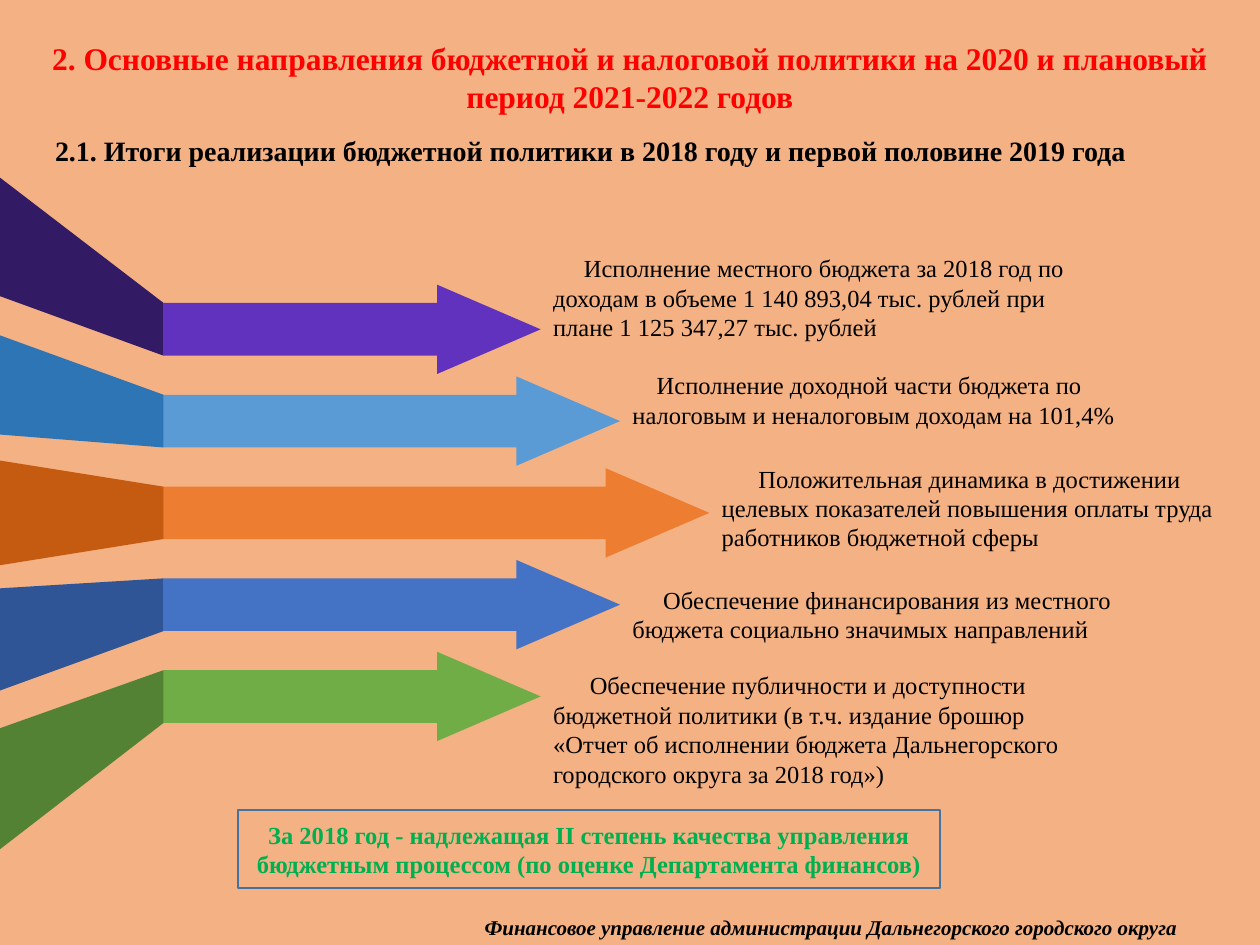
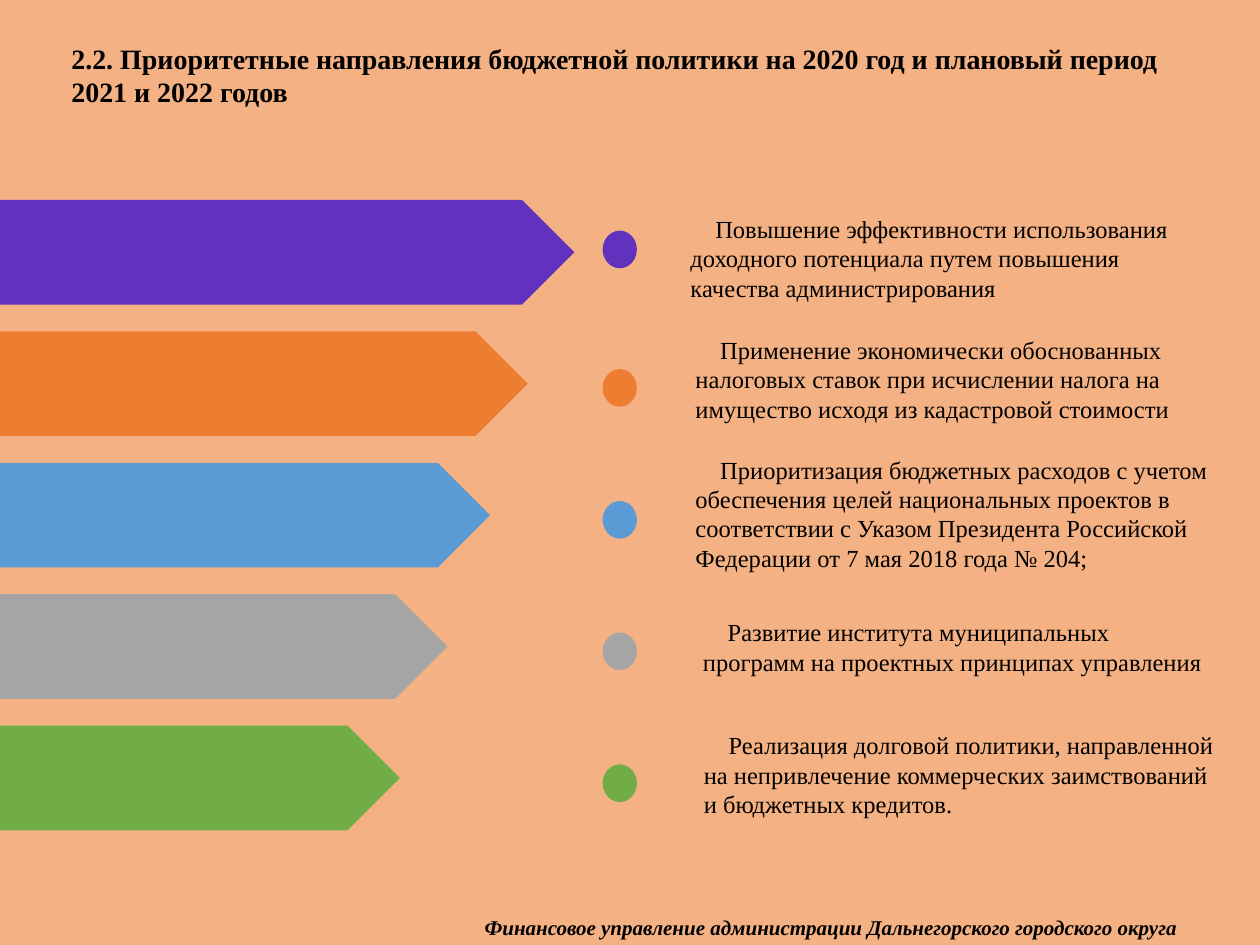
import pptx
import pptx.util
import pptx.dml.color
import pptx.enum.shapes
import pptx.enum.text

Cm = pptx.util.Cm
Kind = pptx.enum.shapes.MSO_SHAPE
Align = pptx.enum.text.PP_ALIGN

# Shared colours
SAND, BLACK, RED, LEAF = "F4B183", "000000", "FF0000", "00B050"
PLUM, SKY, ORANGE, BLUE, GREEN, GREY = (
    "6132BE", "5B9BD5", "ED7D31", "4472C4", "70AD47", "A5A5A5")
FOOTER = "Финансовое управление администрации Дальнегорского городского округа"


def tint(code):
    return pptx.dml.color.RGBColor.from_string(code)


class Deck:
    """Holds the style and the current slide; lengths are in centimetres."""
    font = "Times New Roman"

    def __init__(self):
        self.file = pptx.Presentation()
        self.file.slide_width, self.file.slide_height = Cm(25.4), Cm(19.05)
        back = self.file.slide_master.background.fill
        back.solid()
        back.fore_color.rgb = tint(SAND)

    def page(self):
        self.slide = self.file.slides.add_slide(self.file.slide_layouts[6])
        self.text(8.74, 18.31, 15.37, 0.76, FOOTER, 12, bold=True,
                  slant=True, indent=0.78)

    def label(self, frame, words, size, color, bold, slant, align, indent):
        frame.word_wrap = True
        par = frame.paragraphs[0]
        par.text = words
        par.alignment = align
        font = par.font
        font.name, font.size = self.font, pptx.util.Pt(size)
        font.bold, font.italic = bold, slant
        font.color.rgb = tint(color)
        if indent:
            props = par._p.get_or_add_pPr()
            props.set("marL", "0")
            props.set("indent", str(Cm(indent)))

    def text(self, x, y, w, h, words, size=14, color=BLACK, bold=False,
             slant=False, align=Align.LEFT, indent=0):
        box = self.slide.shapes.add_textbox(Cm(x), Cm(y), Cm(w), Cm(h))
        self.label(box.text_frame, words, size, color, bold, slant, align, indent)
        box.text_frame.auto_size = pptx.enum.text.MSO_AUTO_SIZE.SHAPE_TO_FIT_TEXT

    def paint(self, shape, fill):
        shape.shadow.inherit = False
        shape.fill.solid()
        shape.fill.fore_color.rgb = tint(fill)
        shape.line.fill.background()

    def shape(self, kind, x, y, w, h, fill, adjust=(), turn=0):
        item = self.slide.shapes.add_shape(kind, Cm(x), Cm(y), Cm(w), Cm(h))
        self.paint(item, fill)
        item.rotation = turn
        for index, value in enumerate(adjust):
            item.adjustments[index] = value

    def outline(self, points, fill):
        first, *rest = [(Cm(x), Cm(y)) for x, y in points]
        pen = self.slide.shapes.build_freeform(*first)
        pen.add_line_segments(rest, close=True)
        self.paint(pen.convert_to_shape(), fill)

    def frame(self, x, y, w, h, words, color, edge):
        box = self.slide.shapes.add_shape(
            Kind.RECTANGLE, Cm(x), Cm(y), Cm(w), Cm(h))
        box.shadow.inherit = False
        box.fill.background()
        box.line.color.rgb = tint(edge)
        box.line.width = pptx.util.Pt(1)
        box.text_frame.vertical_anchor = pptx.enum.text.MSO_ANCHOR.MIDDLE
        self.label(box.text_frame, words, 14, color, True, False, Align.CENTER, 0)


def results(deck):
    deck.page()
    deck.text(0.38, 0.66, 24.64, 1.8,
              "2. Основные направления бюджетной и налоговой политики на 2020 "
              "и плановый период 2021-2022 годов",
              18, RED, bold=True, align=Align.CENTER)
    deck.text(0.86, 2.57, 24.13, 0.94,
              "2.1. Итоги реализации бюджетной политики в 2018 году и первой "
              "половине 2019 года", 16, bold=True)

    # Arrows: length, fill, dark side, left edge of side, text top, height, indent
    left, top, step, tall, shaft = 3.3, 5.74, 1.85, 1.8, 0.59
    rows = [
        (7.6, PLUM, "331A64", (3.58, 5.97), 4.98, 2.06, 0.62,
         "Исполнение местного бюджета за 2018 год по доходам в объеме "
         "1 140 893,04 тыс. рублей при плане 1 125 347,27 тыс. рублей"),
        (9.2, SKY, "2E75B6", (6.76, 8.76), 7.34, 1.45, 0.49,
         "Исполнение доходной части бюджета по налоговым и неналоговым "
         "доходам на 101,4%"),
        (11, ORANGE, "C55A11", None, 9.22, 2.06, 0.74,
         "Положительная динамика в достижении целевых показателей повышения "
         "оплаты труда работников бюджетной сферы"),
        (9.2, BLUE, "2F5597", (11.86, 13.92), 11.66, 1.45, 0.62,
         "Обеспечение финансирования из местного бюджета социально значимых "
         "направлений"),
        (7.6, GREEN, "548235", (14.68, 17.12), 13.39, 2.64, 0.74,
         "Обеспечение публичности и доступности бюджетной политики (в т.ч. "
         "издание брошюр «Отчет об исполнении бюджета Дальнегорского "
         "городского округа за 2018 год»)"),
    ]
    for index, (long, fill, dark, side, y, high, indent, words) in enumerate(rows):
        head = top + index * step
        deck.shape(Kind.RIGHT_ARROW, left, head, long, tall, fill, (shaft, 1.16))
        mid, half = head + tall / 2, tall * shaft / 2
        if side:
            deck.outline([(0, side[0]), (left, mid - half),
                          (left, mid + half), (0, side[1])], dark)
        else:
            wide = 2.11
            deck.shape(Kind.TRAPEZOID, (left - wide) / 2, mid - left / 2,
                       wide, left, dark, turn=90)
        deck.text(left + long, y, 11.05, high, words, indent=indent)

    deck.frame(4.8, 16.33, 14.15, 1.57,
               "За 2018 год - надлежащая II степень качества управления "
               "бюджетным процессом (по оценке Департамента финансов)",
               LEAF, "43739E")


def goals(deck):
    deck.page()
    deck.text(1.19, 0.71, 23.52, 1.63,
              "2.2. Приоритетные направления бюджетной политики на 2020 год и "
              "плановый период 2021 и 2022 годов", 16, bold=True)

    # Bands: length, fill, dot top, text box, words
    rows = [
        (11.58, PLUM, 4.65, (13.67, 4.19, 10.19, 2.06),
         "Повышение эффективности использования доходного потенциала путем "
         "повышения качества администрирования"),
        (10.64, ORANGE, 7.44, (13.77, 6.63, 10.8, 2.06),
         "Применение экономически обоснованных налоговых ставок при "
         "исчислении налога на имущество исходя из кадастровой стоимости"),
        (9.88, SKY, 10.1, (13.77, 9.04, 11.33, 2.64),
         "Приоритизация бюджетных расходов с учетом обеспечения целей "
         "национальных проектов в соответствии с Указом Президента "
         "Российской Федерации от 7 мая 2018 года № 204;"),
        (9.02, GREY, 12.75, (13.92, 12.32, 10.8, 1.45),
         "Развитие института муниципальных программ на проектных принципах "
         "управления"),
        (8.06, GREEN, 15.41, (13.94, 14.6, 10.95, 2.06),
         "Реализация долговой политики, направленной на непривлечение "
         "коммерческих заимствований и бюджетных кредитов."),
    ]
    for index, (long, fill, dot, box, words) in enumerate(rows):
        deck.shape(Kind.PENTAGON, 0, 4.03 + index * 2.65, long, 2.11, fill)
        deck.shape(Kind.OVAL, 12.15, dot, 0.69, 0.76, fill)
        deck.text(*box, words, indent=0.5)


def main():
    deck = Deck()
    results(deck)
    goals(deck)
    deck.file.save("out.pptx")


if __name__ == "__main__":
    main()
